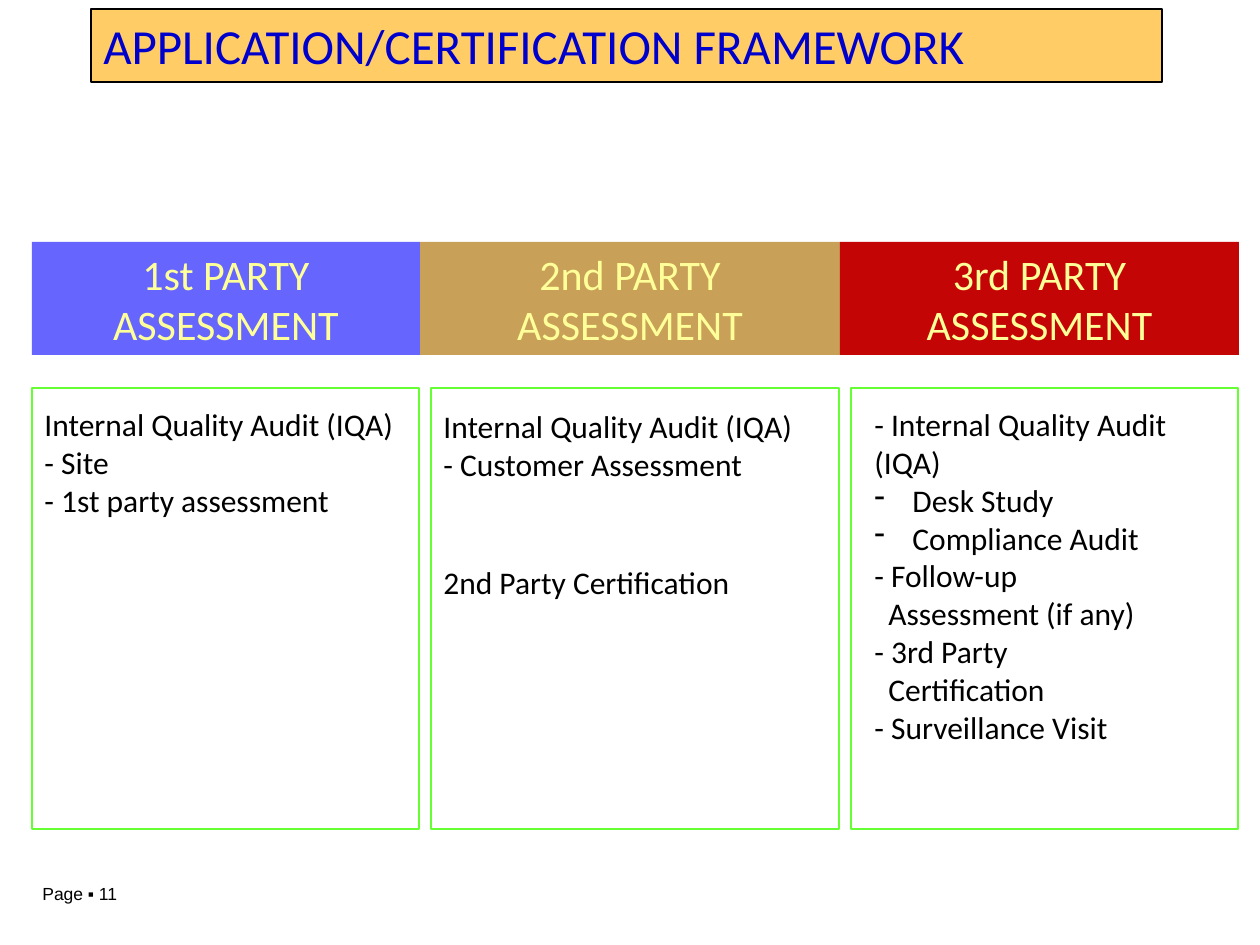
import pptx
import pptx.util
import pptx.dml.color
import pptx.enum.shapes
import pptx.enum.text
import pptx.oxml.ns
import lxml.etree

PX = 914400 / 126
COLORS = {
    "title_fill": "FFCC66", "title_text": "0000CC", "black": "000000",
    "first": "6666FF", "second": "C8A058", "third": "C40505",
    "head_text": "FFFF99", "frame": "66FF33",
}
ALIGN = pptx.enum.text.PP_ALIGN
BULLET, HANGING = "bullet", "hanging"

# header: x, width, fill, text; frame: x, width;
# notes: offset from the frame (x, y), width, lines of (text, style)
COLUMNS = [
    {"head": (32, 388, "first", "1st PARTY ASSESSMENT"), "frame": (32, 387),
     "notes": [(0, 11, 398, [("Internal Quality Audit (IQA)", None), ("- Site", None),
                             ("- 1st party assessment", None)])]},
    {"head": (420, 420, "second", "2nd PARTY\nASSESSMENT"), "frame": (431, 408),
     "notes": [(0, 13, 420, [("Internal Quality Audit (IQA)", None),
                             ("- Customer Assessment", None)]),
               (0, 169, 420, [("2nd Party Certification", None)])]},
    {"head": (840, 399, "third", "3rd PARTY\nASSESSMENT"), "frame": (851, 387),
     "notes": [(11, 11, 377, [("- Internal Quality Audit (IQA)", None),
                              (" Desk Study", BULLET), (" Compliance Audit", BULLET),
                              ("- Follow-up", None), ("Assessment (if any)", HANGING),
                              ("- 3rd Party", None), ("Certification", HANGING),
                              ("- Surveillance Visit", None)])]},
]


def emu(*lengths):
    return [round(n * PX) for n in lengths]


def rgb(name):
    return pptx.dml.color.RGBColor.from_string(COLORS[name])


def set_font(p, size, color, name="Calibri"):
    for r in p.runs:
        for key, value in {"name": name, "size": pptx.util.Pt(size)}.items():
            setattr(r.font, key, value)
        r.font.color.rgb = rgb(color)


def set_indent(p, style):
    pPr = p._p.get_or_add_pPr()
    left, first = {BULLET: (31, -31), HANGING: (14, 0)}[style]
    for key, value in zip(("marL", "indent"), emu(left, first)):
        pPr.set(key, str(value))
    if style == BULLET:
        lxml.etree.SubElement(pPr, pptx.oxml.ns.qn("a:buChar")).set("char", "-")


def add_rect(s, box, fill=None, line=None):
    sp = s.shapes.add_shape(pptx.enum.shapes.MSO_SHAPE.RECTANGLE, *emu(*box))
    sp.shadow.inherit = False
    if fill:
        sp.fill.solid()
        sp.fill.fore_color.rgb = rgb(fill)
    else:
        sp.fill.background()
    if line:
        sp.line.color.rgb = rgb(line)
        sp.line.width = pptx.util.Pt(0.75)
    else:
        sp.line.fill.background()
    return sp


def add_label(s, box, text, size, color, align, **look):
    sp = add_rect(s, box, **look)
    tf = sp.text_frame
    tf.word_wrap = True
    tf.vertical_anchor = pptx.enum.text.MSO_ANCHOR.TOP
    p = tf.paragraphs[0]
    p.text = text
    p.alignment = align
    set_font(p, size, color)


def add_text(s, box, lines, size, name="Calibri"):
    tf = s.shapes.add_textbox(*emu(*box)).text_frame
    tf.word_wrap = True
    for i, (text, style) in enumerate(lines):
        p = tf.add_paragraph() if i else tf.paragraphs[0]
        p.text = text
        if style:
            set_indent(p, style)
        set_font(p, size, "black", name)


def add_column(s, column, head_top, frame_top):
    x, w, fill, text = column["head"]
    add_label(s, (x, head_top, w, 113), text, 24, "head_text", ALIGN.CENTER, fill=fill)
    x, w = column["frame"]
    for dx, dy, note_w, lines in column["notes"]:
        add_text(s, (x + dx, frame_top + dy, note_w, 13 + 38 * len(lines)), lines, 18)
    add_rect(s, (x, frame_top, w, 441), line="frame")


def main():
    prs = pptx.Presentation()
    prs.slide_width, prs.slide_height = emu(1260, 945)
    s = prs.slides.add_slide(prs.slide_layouts[6])
    add_text(s, (30, 877, 185, 34), [("Page ▪ 11", None)], 10, "Arial")
    add_label(s, (91, 9, 1071, 73), "APPLICATION/CERTIFICATION FRAMEWORK", 28,
              "title_text", ALIGN.LEFT, fill="title_fill", line="black")
    for column in COLUMNS:
        add_column(s, column, 242, 388)
    prs.save("out.pptx")


if __name__ == "__main__":
    main()
